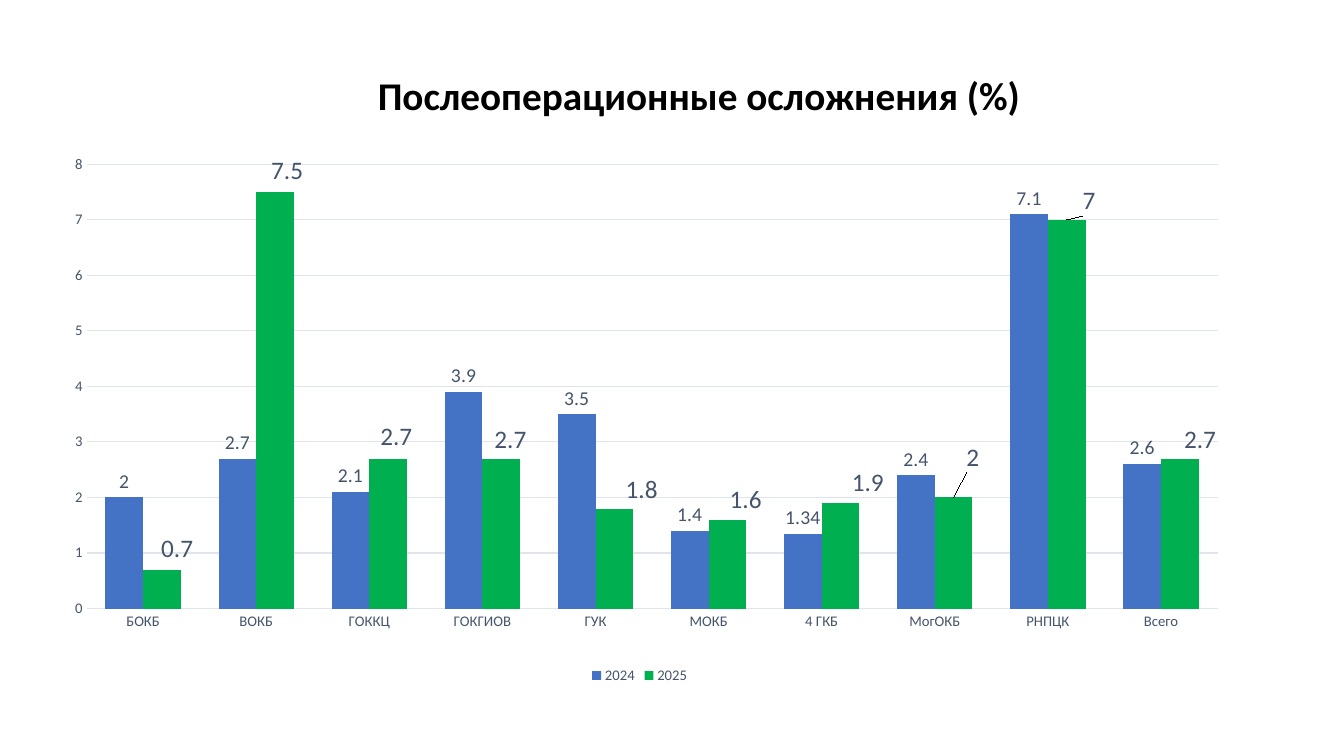
from lxml.etree import SubElement
from pptx import Presentation
from pptx.chart.data import CategoryChartData
from pptx.dml.color import RGBColor
from pptx.enum.chart import XL_CHART_TYPE, XL_LABEL_POSITION, XL_LEGEND_POSITION, XL_TICK_MARK
from pptx.enum.text import MSO_ANCHOR, PP_ALIGN
from pptx.oxml.ns import qn
from pptx.util import Inches, Pt

COLORS = {"title": "000000", "label": "44546A", "grid": "E0E5EB", "2024": "4472C4", "2025": "00B050"}
CLINICS = ["БОКБ", "ВОКБ", "ГОККЦ", "ГОКГИОВ", "ГУК", "МОКБ", "4 ГКБ", "МогОКБ", "РНПЦК", "Всего"]
RATES = {
    "2024": [2, 2.7, 2.1, 3.9, 3.5, 1.4, 1.34, 2.4, 7.1, 2.6],
    "2025": [0.7, 7.5, 2.7, 2.7, 1.8, 1.6, 1.9, 2, 7, 2.7],
}
LABEL_SIZES = {"2024": 14, "2025": 18}
LABEL_SHIFTS = [(0.15, -0.02), (0.12, -0.02), (0.08, -0.03), (0.09, 0), (0.27, 0),
                (0.18, -0.01), (0.27, -0.01), (0.19, -0.21), (0.22, 0), (0.2, 0)]
CHART_WIDTH, CHART_HEIGHT = 11.77, 5.31


class SlideBuilder:
    font_name = "Calibri"

    def __init__(self, slide):
        self.slide = slide

    def style_font(self, font, size, color, bold=False):
        font.name = self.font_name
        font.size = Pt(size)
        font.bold = bold
        font.color.rgb = RGBColor.from_string(COLORS[color])

    def title(self, text, left, top, width, height):
        box = self.slide.shapes.add_textbox(Inches(left), Inches(top), Inches(width), Inches(height))
        frame = box.text_frame
        frame.word_wrap = True
        frame.vertical_anchor = MSO_ANCHOR.MIDDLE
        heading = frame.paragraphs[0]
        heading.alignment = PP_ALIGN.CENTER
        heading.line_spacing = 0.9
        run = heading.add_run()
        run.text = text
        self.style_font(run.font, 28, "title", bold=True)

    def column_chart(self, left, top):
        data = CategoryChartData()
        data.categories = CLINICS
        for year, rates in RATES.items():
            data.add_series(year, rates)
        chart = self.slide.shapes.add_chart(
            XL_CHART_TYPE.COLUMN_CLUSTERED, Inches(left), Inches(top),
            Inches(CHART_WIDTH), Inches(CHART_HEIGHT), data).chart
        chart.has_title = False
        self.style_font(chart.font, 10.5, "label")
        chart.has_legend = True
        chart.legend.position = XL_LEGEND_POSITION.BOTTOM
        chart.legend.include_in_layout = False
        self.style_font(chart.legend.font, 10.5, "label")
        self.axes(chart)
        plot = chart.plots[0]
        plot.gap_width = 100
        plot.overlap = 0
        plot.vary_by_categories = False
        for series in plot.series:
            self.series(series)
        self.shift_labels(plot.series[1])
        self.place_plot(chart, x=0.034, y=0.021, w=0.953, h=0.83)

    def axes(self, chart):
        for axis in (chart.category_axis, chart.value_axis):
            axis.major_tick_mark = axis.minor_tick_mark = XL_TICK_MARK.NONE
            self.style_font(axis.tick_labels.font, 10.5, "label")
        rates_axis = chart.value_axis
        rates_axis.minimum_scale, rates_axis.maximum_scale, rates_axis.major_unit = 0, 8, 1
        rates_axis.format.line.fill.background()
        for line in (chart.category_axis.format.line, rates_axis.major_gridlines.format.line):
            line.width = Pt(0.75)
            line.color.rgb = RGBColor.from_string(COLORS["grid"])

    def series(self, series):
        series.invert_if_negative = False
        series.format.fill.solid()
        series.format.fill.fore_color.rgb = RGBColor.from_string(COLORS[series.name])
        labels = series.data_labels
        labels.show_value = True
        labels.position = XL_LABEL_POSITION.OUTSIDE_END
        self.style_font(labels.font, LABEL_SIZES[series.name], "label")

    def shift_labels(self, series):
        for index, (right, down) in enumerate(LABEL_SHIFTS):
            label = series.points[index].data_label
            self.style_font(label.font, LABEL_SIZES[series.name], "label")
            label.position = XL_LABEL_POSITION.OUTSIDE_END
        for entry, (right, down) in zip(series.data_labels._element.findall(qn("c:dLbl")), LABEL_SHIFTS):
            entry.insert(1, self.manual_layout(entry, x=right / CHART_WIDTH, y=down / CHART_HEIGHT))

    def place_plot(self, chart, **box):
        area = chart._chartSpace.chart.plotArea
        for layout in area.findall(qn("c:layout")):
            area.remove(layout)
        area.insert(0, self.manual_layout(area, layoutTarget="inner", xMode="edge", yMode="edge", **box))

    def manual_layout(self, parent, **settings):
        layout = SubElement(parent, qn("c:layout"))
        manual = SubElement(layout, qn("c:manualLayout"))
        for name, value in settings.items():
            SubElement(manual, qn(f"c:{name}")).set("val", str(value))
        return layout


def main():
    deck = Presentation()
    deck.slide_width, deck.slide_height = Inches(13.33), Inches(7.5)
    builder = SlideBuilder(deck.slides.add_slide(deck.slide_layouts[6]))
    builder.title("Послеоперационные осложнения (%)", 1.18, 0.25, 11.5, 1.45)
    builder.column_chart(0.46, 1.52)
    deck.save("out.pptx")


if __name__ == "__main__":
    main()
